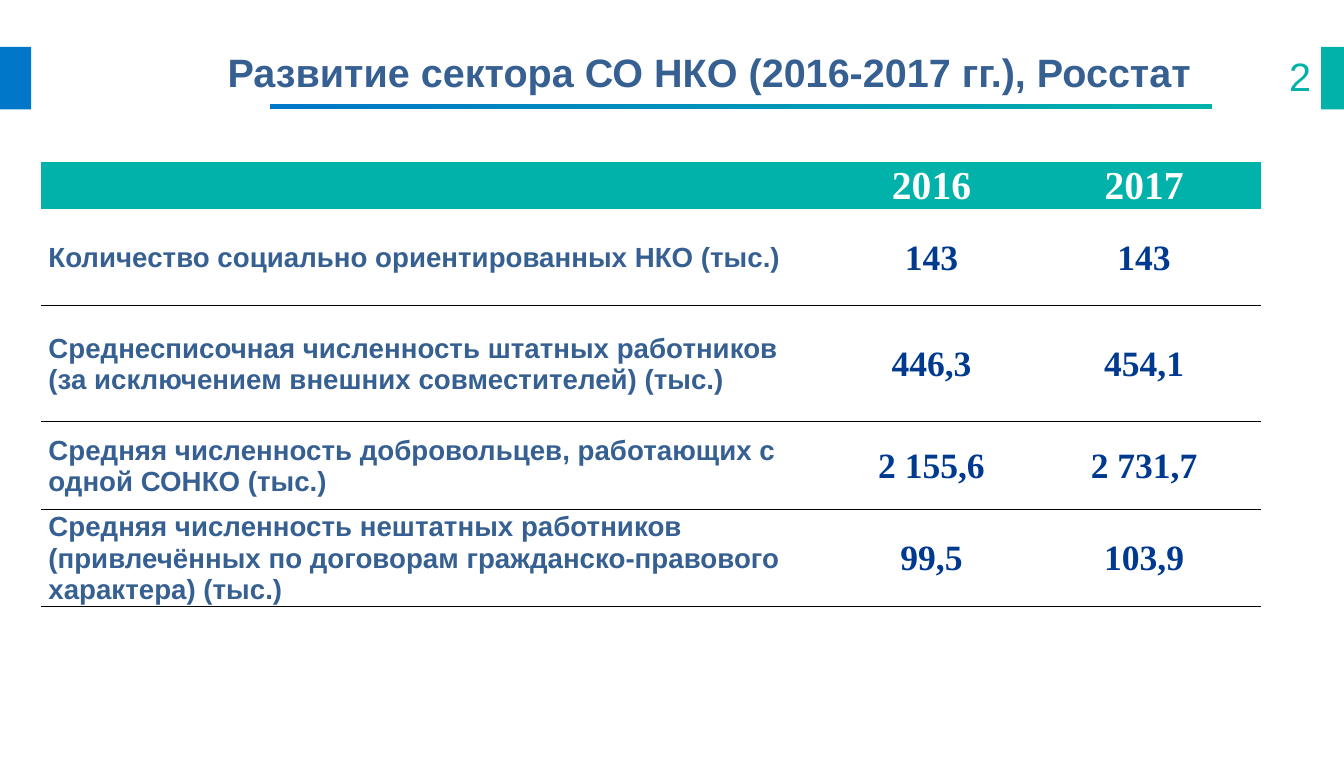
from lxml import etree
from pptx import Presentation
from pptx.dml.color import RGBColor
from pptx.enum.shapes import MSO_SHAPE
from pptx.enum.text import MSO_ANCHOR, MSO_AUTO_SIZE, PP_ALIGN
from pptx.oxml import parse_xml
from pptx.oxml.ns import nsdecls
from pptx.util import Inches, Pt

RECT = MSO_SHAPE.RECTANGLE
MIDDLE = MSO_ANCHOR.MIDDLE
LEFT, CENTER, RIGHT = PP_ALIGN.LEFT, PP_ALIGN.CENTER, PP_ALIGN.RIGHT
BLUE = RGBColor(0x00, 0x77, 0xC8)
TEAL = RGBColor(0x00, 0xB2, 0xA9)
SLATE = RGBColor(0x37, 0x60, 0x92)
NAVY = RGBColor(0x00, 0x39, 0x90)
WHITE = RGBColor(0xFF, 0xFF, 0xFF)

W, H = 9.45, 5.32
BAND_TOP, BAND_HEIGHT = 0.33, 0.44
COLS = [5.59, 1.34, 1.65]
ROWS = [0.33, 0.68, 0.81, 0.62, 0.68]
DATA = [
    ("", "2016", "2017"),
    ("Количество социально ориентированных НКО (тыс.)", "143", "143"),
    ("Среднесписочная численность штатных работников \v"
     "(за исключением внешних совместителей) (тыс.)", "446,3", "454,1"),
    ("Средняя численность добровольцев, работающих с одной СОНКО (тыс.)",
     "2 155,6", "2 731,7"),
    ("Средняя численность нештатных работников (привлечённых по договорам "
     "гражданско-правового характера) (тыс.)", "99,5", "103,9"),
]
HEAD = dict(name="Times New Roman", size=Pt(20), bold=True)
LABEL = dict(name="Arial", size=Pt(14), bold=True)
VALUE = dict(name="Times New Roman", size=Pt(18), bold=True)
TITLE = dict(name="Arial", size=Pt(20), bold=True)
NUMBER = dict(name="Arial", size=Pt(20), bold=False)
NO_STYLE = "{2D5ABB26-0587-4C30-8999-92F81FD0307C}"


def write(tf, text, font, color, align):
    p = tf.paragraphs[0]
    p.text = text
    p.alignment = align
    for item in [p] + list(p.runs):
        for key, value in font.items():
            setattr(item.font, key, value)
        item.font.color.rgb = color


def set_frame(sp, text, font, color, align):
    """Fill a text shape that has no insets and is centred vertically."""
    tf = sp.text_frame
    tf.margin_left = tf.margin_right = tf.margin_top = tf.margin_bottom = 0
    tf.word_wrap = True
    tf.auto_size = MSO_AUTO_SIZE.NONE
    tf.vertical_anchor = MIDDLE
    write(tf, text, font, color, align)


prs = Presentation()
prs.slide_width, prs.slide_height = Inches(W), Inches(H)
s = prs.slides.add_slide(prs.slide_layouts[5])

# Side bands and the gradient rule under the title
for left, top, width, height, color in [
    (0, BAND_TOP, 0.22, BAND_HEIGHT, BLUE),
    (W - 0.16, BAND_TOP, 0.16, BAND_HEIGHT, TEAL),
    (1.9, 0.73, 6.62, 0.04, None),
]:
    sp = s.shapes.add_shape(RECT, Inches(left), Inches(top), Inches(width), Inches(height))
    sp.shadow.inherit = False
    sp.line.fill.background()
    if color:
        sp.fill.solid()
        sp.fill.fore_color.rgb = color
    else:
        sp.fill.gradient()
        sp.fill.gradient_angle = 0
        for stop, stop_color in zip(sp.fill.gradient_stops, (BLUE, TEAL)):
            stop.color.rgb = stop_color

title = s.shapes.title
title.left, title.top = Inches(1.6), Inches(BAND_TOP)
title.width, title.height = Inches(7), Inches(0.35)
set_frame(title, "Развитие сектора СО НКО (2016-2017 гг.), Росстат", TITLE, SLATE, LEFT)

number = s.shapes.add_textbox(Inches(8.78), Inches(0.39), Inches(0.44), Inches(0.28))
set_frame(number, "2", NUMBER, TEAL, RIGHT)

# Table of indicators
frame = s.shapes.add_table(len(ROWS), len(COLS), Inches(0.29), Inches(1.14),
                           Inches(sum(COLS)), Inches(sum(ROWS)))
table = frame.table
table.first_row = table.horz_banding = False
table._tbl.tblPr.find("{*}tableStyleId").text = NO_STYLE
for column, width in zip(table.columns, COLS):
    column.width = Inches(width)
for row, height in zip(table.rows, ROWS):
    row.height = Inches(height)

for i, texts in enumerate(DATA):
    for j, text in enumerate(texts):
        cell = table.cell(i, j)
        cell.margin_left = Inches(0.01 if j else 0.05)
        cell.margin_right = cell.margin_top = Inches(0.01)
        cell.margin_bottom = 0
        cell.vertical_anchor = MIDDLE
        if i == 0:
            font, color = HEAD, WHITE
            cell.fill.solid()
            cell.fill.fore_color.rgb = TEAL
        else:
            font, color = (VALUE, NAVY) if j else (LABEL, SLATE)
            cell.fill.background()
            border = etree.SubElement(cell._tc.get_or_add_tcPr(), "border")
            border.getparent().replace(border, parse_xml(
                f'<a:lnB {nsdecls("a")} w="{Pt(0.5)}"><a:solidFill>'
                '<a:srgbClr val="000000"/></a:solidFill></a:lnB>'))
            tcPr = cell._tc.tcPr
            tcPr.insert(0, tcPr[-1])
        write(cell.text_frame, text, font, color, CENTER if j else LEFT)

prs.save("out.pptx")
